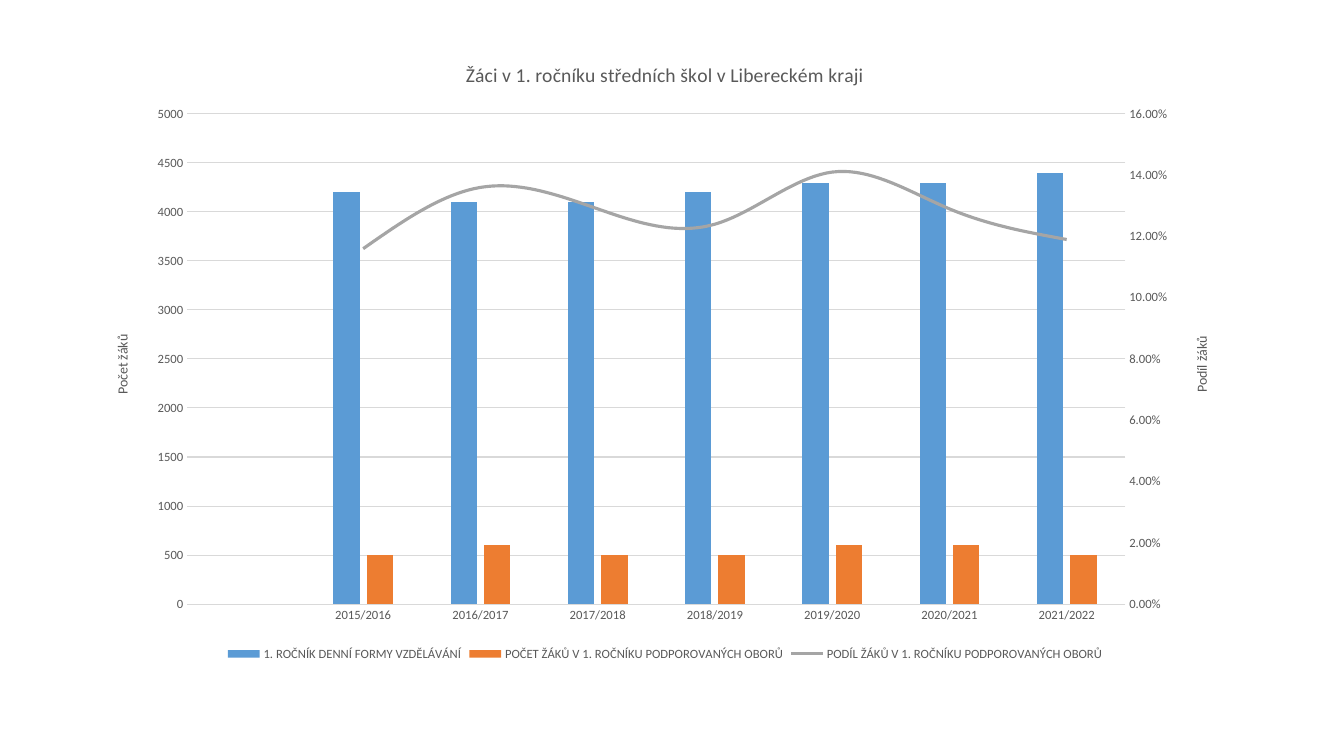
from copy import deepcopy
from dataclasses import dataclass

from pptx import Presentation
from pptx.chart.axis import CategoryAxis, ValueAxis
from pptx.chart.chart import Chart
from pptx.chart.data import CategoryChartData
from pptx.dml.color import RGBColor
from pptx.enum.chart import XL_CHART_TYPE, XL_LEGEND_POSITION, XL_TICK_MARK
from pptx.oxml import parse_xml
from pptx.oxml.ns import nsdecls
from pptx.text.text import Font, TextFrame
from pptx.util import Inches, Pt

BLUE = RGBColor(0x5B, 0x9B, 0xD5)
ORANGE = RGBColor(0xED, 0x7D, 0x31)
GRAY = RGBColor(0xA5, 0xA5, 0xA5)
PALE = RGBColor(0xD9, 0xD9, 0xD9)
DARK = RGBColor(0x59, 0x59, 0x59)
FACE = "Calibri"


@dataclass
class Series:
    name: str
    vals: list[float]
    color: RGBColor
    form: str = "General"


YEARS = [f"{year}/{year + 1}" for year in range(2015, 2022)]
BARS = [
    Series("1. ROČNÍK DENNÍ FORMY VZDĚLÁVÁNÍ",
           [4200, 4100, 4100, 4200, 4300, 4300, 4400], BLUE),
    Series("POČET ŽÁKŮ V 1. ROČNÍKU PODPOROVANÝCH OBORŮ",
           [500, 600, 500, 500, 600, 600, 500], ORANGE),
]
SHARE = Series("PODÍL ŽÁKŮ V 1. ROČNÍKU PODPOROVANÝCH OBORŮ",
               [0.116, 0.136, 0.129, 0.124, 0.141, 0.129, 0.119], GRAY, "0.00%")


def style(font: Font, size: float = 9) -> None:
    font.name = FACE
    font.size = Pt(size)
    font.bold = False
    font.color.rgb = DARK


def write(frame: TextFrame, text: str, *, size: float, turn: int = 0) -> None:
    frame.text = text
    style(frame.paragraphs[0].runs[0].font, size)
    body = frame._txBody.bodyPr
    body.set("rot", str(turn * 60000))
    body.set("vert", "horz")


def scale(axis: ValueAxis, title: str, top: float, step: float) -> None:
    axis.minimum_scale, axis.maximum_scale = 0, top
    axis.major_unit = step
    write(axis.axis_title.text_frame, title, size=10, turn=-90)


def trim(axis: CategoryAxis | ValueAxis) -> None:
    axis.major_tick_mark = axis.minor_tick_mark = XL_TICK_MARK.NONE
    style(axis.tick_labels.font)


def put(node, tag: str, val: str) -> None:
    node.xpath(f"c:{tag}")[0].set("val", val)


def add_line(chart: Chart) -> None:
    """Move the last series to a smooth line on a right-hand axis."""
    area = chart._chartSpace.chart.plotArea
    bar = area.xpath("c:barChart")[0]
    row = bar.xpath("c:ser")[-1]
    for flag in row.xpath("c:invertIfNegative"):
        row.remove(flag)
    row.xpath("c:spPr")[0].addnext(parse_xml(
        f'<c:marker {nsdecls("c")}><c:symbol val="none"/></c:marker>'))
    row.append(parse_xml(f'<c:smooth {nsdecls("c")} val="1"/>'))
    line = parse_xml(
        f'<c:lineChart {nsdecls("c")}><c:grouping val="standard"/>'
        '<c:varyColors val="0"/><c:marker val="1"/>'
        '<c:axId val="501"/><c:axId val="502"/></c:lineChart>')
    line.insert(2, row)
    bar.addnext(line)

    # Second pair of axes
    left = area.xpath("c:valAx")[0]
    right = deepcopy(left)
    base = deepcopy(area.xpath("c:catAx")[0])
    left.addnext(right)
    right.addnext(base)
    for node, own, other in ((base, "501", "502"), (right, "502", "501")):
        put(node, "axId", own)
        put(node, "crossAx", other)
    put(right, "axPos", "r")
    put(right, "crosses", "max")
    CategoryAxis(base).visible = False
    axis = ValueAxis(right)
    axis.has_major_gridlines = False
    axis.tick_labels.number_format = SHARE.form
    axis.tick_labels.number_format_is_linked = False
    scale(axis, "Podíl žáků", 0.16, 0.02)


def main() -> None:
    deck = Presentation()
    deck.slide_width, deck.slide_height = Inches(13.33), Inches(7.5)
    slide = deck.slides.add_slide(deck.slide_layouts[6])

    # Data, with an empty first group
    data = CategoryChartData()
    data.categories = ["", *YEARS]
    for row in [*BARS, SHARE]:
        data.add_series(row.name, [None, *row.vals], row.form)
    chart = slide.shapes.add_chart(
        XL_CHART_TYPE.COLUMN_CLUSTERED, Inches(0.92), Inches(0.4),
        Inches(11.35), Inches(6.2), data).chart
    chart.font.name, chart.font.size = FACE, Pt(10)

    # Title and legend
    chart.has_title = True
    write(chart.chart_title.text_frame,
          "Žáci v 1. ročníku středních škol v Libereckém kraji", size=14)
    chart.has_legend = True
    chart.legend.position = XL_LEGEND_POSITION.BOTTOM
    chart.legend.include_in_layout = False
    style(chart.legend.font)

    # Columns and line colours
    plot = chart.plots[0]
    plot.gap_width, plot.overlap = 219, -27
    plot.vary_by_categories = False
    *cols, curve = plot.series
    for col, row in zip(cols, BARS):
        col.format.fill.solid()
        col.format.fill.fore_color.rgb = row.color
    curve.format.line.color.rgb = SHARE.color
    curve.format.line.width = Pt(2.25)

    # Axes
    base, left = chart.category_axis, chart.value_axis
    trim(base)
    trim(left)
    left.has_major_gridlines = True
    for rule in (base.format.line, left.major_gridlines.format.line):
        rule.color.rgb = PALE
        rule.width = Pt(0.75)
    left.format.line.fill.background()
    scale(left, "Počet žáků", 5000, 500)

    add_line(chart)
    deck.save("out.pptx")


if __name__ == "__main__":
    main()
